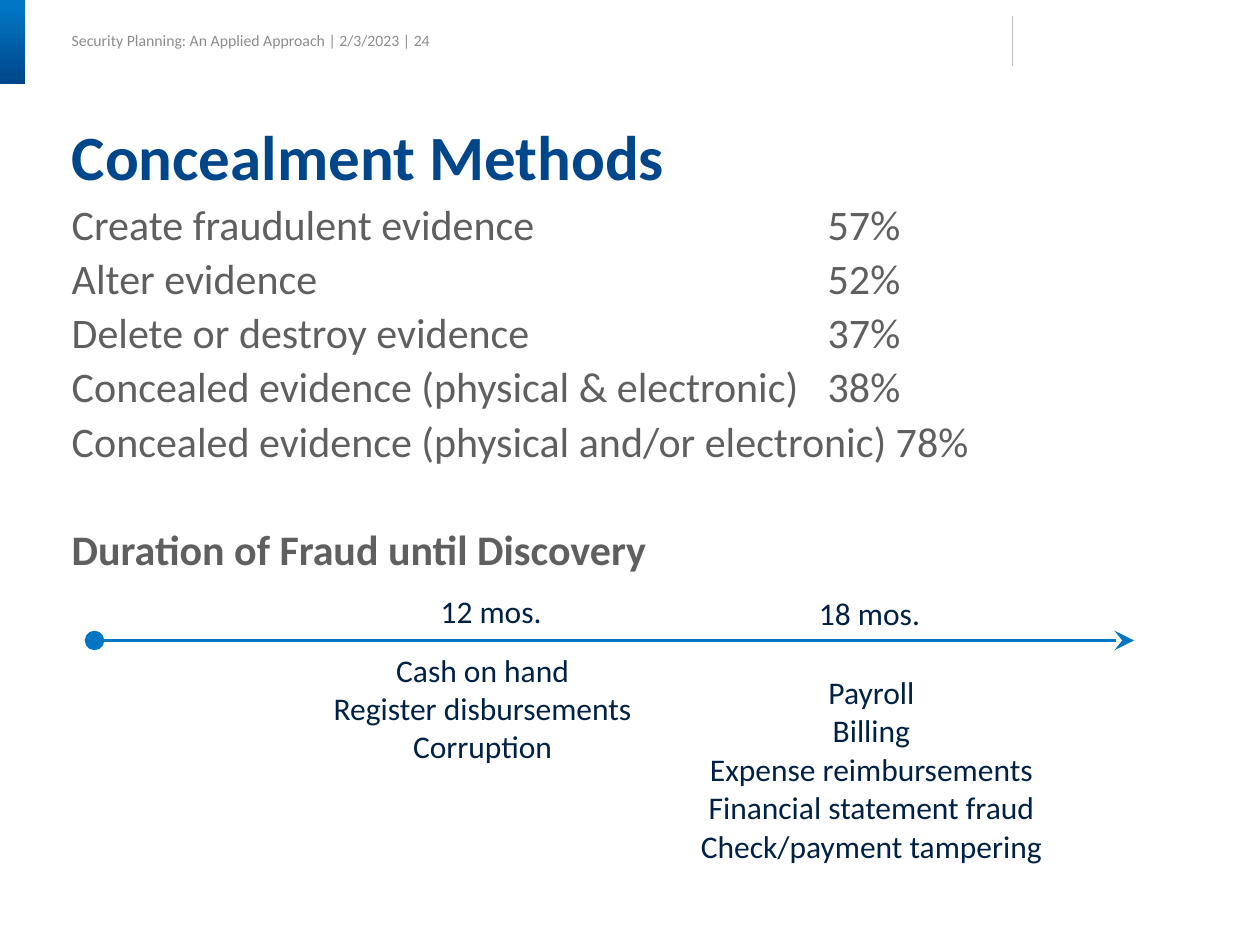
from lxml import etree
from pptx import Presentation
from pptx import util as u
from pptx.dml.color import RGBColor
from pptx.enum import shapes, text
from pptx.oxml import ns

WHITE = RGBColor(0xFF, 0xFF, 0xFF)
NAVY = RGBColor(0x00, 0x46, 0x8A)
BLUE = RGBColor(0x01, 0x76, 0xC3)
DARK = RGBColor(0x00, 0x21, 0x43)
GRAY = RGBColor(0x5F, 0x5F, 0x5F)
FOOTER_GRAY = RGBColor(0x8C, 0x8C, 0x8C)
RULE_GRAY = RGBColor(0xBF, 0xBF, 0xBF)
FONT = "Calibri"
MARGIN = 41
PERCENT_TAB = 432

METHODS = [
    "Create fraudulent evidence\t57%",
    "Alter evidence\t52%",
    "Delete or destroy evidence\t37%",
    "Concealed evidence (physical & electronic)\t38%",
    "Concealed evidence (physical and/or electronic) 78%",
]
SHORT_FRAUDS = ["Cash on hand", "Register disbursements", "Corruption"]
LONG_FRAUDS = [
    "Payroll",
    "Billing",
    "Expense reimbursements",
    "Financial statement fraud",
    "Check/payment tampering",
]


def add_text_box(slide, left, top, width, height, fill=None):
    shape = slide.shapes.add_textbox(u.Pt(left), u.Pt(top), u.Pt(width), u.Pt(height))
    if fill is not None:
        shape.fill.solid()
        shape.fill.fore_color.rgb = fill
    frame = shape.text_frame
    frame.word_wrap = True
    frame.margin_left = frame.margin_right = 0
    frame.margin_top = frame.margin_bottom = 0
    return frame


def add_lines(frame, lines, size, color, bold=False, spacing=None, before=0, align=None):
    for line in lines:
        first = frame.paragraphs[0]
        paragraph = frame.add_paragraph() if first.runs else first
        paragraph.alignment = align
        paragraph.line_spacing = spacing
        paragraph.space_before = u.Pt(before)
        run = paragraph.add_run()
        run.text = line
        run.font.name = FONT
        run.font.size = u.Pt(size)
        run.font.bold = bold
        run.font.color.rgb = color


def add_tab_stop(paragraph, position):
    properties = paragraph._p.get_or_add_pPr()
    tabs = etree.SubElement(properties, ns.qn("a:tabLst"))
    etree.SubElement(tabs, ns.qn("a:tab"), pos=str(u.Pt(position)), algn="l")


def add_line(slide, start, end, color, width, head=None, tail=None):
    connector = slide.shapes.add_connector(
        shapes.MSO_CONNECTOR.STRAIGHT, *(u.Pt(value) for value in (*start, *end)))
    connector.line.color.rgb = color
    connector.line.width = u.Pt(width)
    outline = connector.line._get_or_add_ln()
    for tag, kind in (("a:headEnd", head), ("a:tailEnd", tail)):
        if kind:
            etree.SubElement(outline, ns.qn(tag), type=kind, w="lg", len="lg")
    etree.SubElement(connector._element.spPr, ns.qn("a:effectLst"))


def add_corner_band(slide):
    shape = slide.shapes.add_shape(
        shapes.MSO_SHAPE.RECTANGLE, 0, 0, u.Pt(14.4), u.Pt(48))
    shape.shadow.inherit = False
    shape.line.fill.background()
    shape.fill.gradient()
    shape.fill.gradient_angle = 270
    for stop, position, color in zip(shape.fill.gradient_stops, (0.1, 1), (BLUE, NAVY)):
        stop.position = position
        stop.color.rgb = color


def add_header(slide):
    frame = add_text_box(slide, MARGIN, 16.5, 220, 16.5)
    frame.vertical_anchor = text.MSO_ANCHOR.MIDDLE
    frame.margin_bottom = u.Pt(3)
    add_lines(frame, ["Security Planning: An Applied Approach | 2/3/2023 | 24"], 9, FOOTER_GRAY)
    add_corner_band(slide)
    add_line(slide, (578.6, 9.2), (578.6, 37.6), RULE_GRAY, 0.75)


def add_body(slide):
    frame = add_text_box(slide, MARGIN, 120, 641, 384, fill=WHITE)
    add_lines(frame, METHODS, 24, GRAY, spacing=u.Pt(22), before=9)
    for paragraph in frame.paragraphs:
        add_tab_stop(paragraph, PERCENT_TAB)
    add_lines(frame, ["Duration of Fraud until Discovery"], 24, GRAY,
              bold=True, spacing=u.Pt(22), before=40)


def add_title(slide):
    frame = add_text_box(slide, MARGIN, 72, 642, 39.6)
    add_lines(frame, ["Concealment Methods"], 36, NAVY, bold=True, spacing=0.9)


def add_timeline(slide):
    add_line(slide, (54, 366), (648, 366), BLUE, 2.25, head="oval", tail="stealth")
    for center, top, width, height, frauds, spacing in (
            (275.8, 372, 180, 72, SHORT_FRAUDS, None),
            (498, 384, 210, 112, LONG_FRAUDS, u.Pt(22))):
        frame = add_text_box(slide, center - width / 2, top, width, height)
        add_lines(frame, frauds, 18, DARK, spacing=spacing, align=text.PP_ALIGN.CENTER)
    for left, top, duration in ((251.8, 338, "12 mos."), (468, 339.2, "18 mos.")):
        frame = add_text_box(slide, left, top, 72, 24)
        add_lines(frame, [duration], 18, DARK, spacing=u.Pt(22), before=9)


def main():
    presentation = Presentation()
    presentation.slide_width = u.Pt(720)
    presentation.slide_height = u.Pt(540)
    slide = presentation.slides.add_slide(presentation.slide_layouts[6])
    add_header(slide)
    add_body(slide)
    add_title(slide)
    add_timeline(slide)
    presentation.save("out.pptx")


if __name__ == "__main__":
    main()
